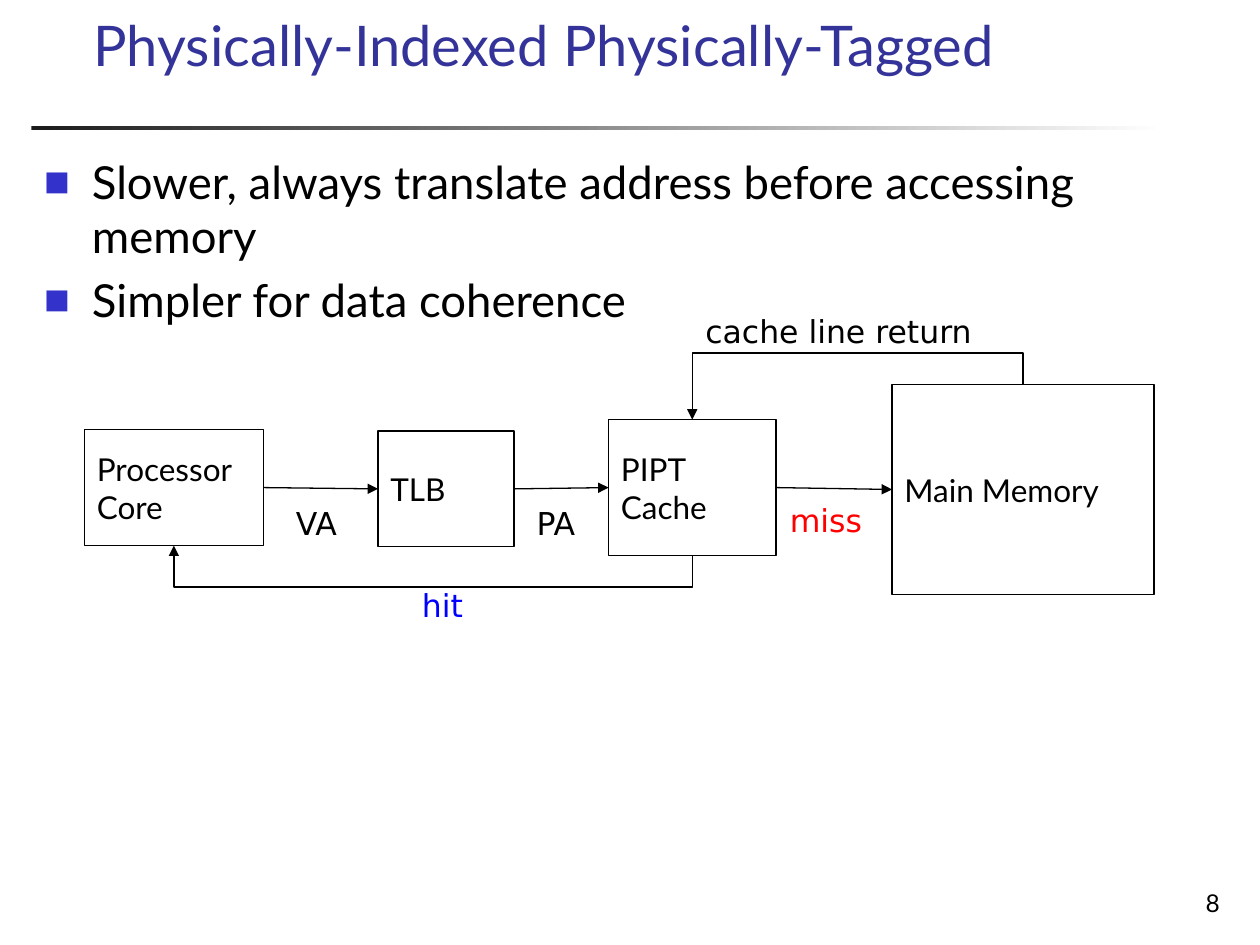
import pptx
import pptx.dml.color
import pptx.enum.dml
import pptx.enum.shapes
import pptx.enum.text
import pptx.oxml
import pptx.oxml.ns
import pptx.util
from pptx.util import Inches

BLACK = pptx.dml.color.RGBColor(0x00, 0x00, 0x00)
WHITE = pptx.dml.color.RGBColor(0xFF, 0xFF, 0xFF)
CHARCOAL = pptx.dml.color.RGBColor(0x1C, 0x1C, 0x1C)
TITLE_BLUE = pptx.dml.color.RGBColor(0x33, 0x33, 0x99)
BULLET_BLUE = pptx.dml.color.RGBColor(0x33, 0x33, 0xCC)
HIT_BLUE = pptx.dml.color.RGBColor(0x00, 0x00, 0xFF)
MISS_RED = pptx.dml.color.RGBColor(0xFF, 0x00, 0x00)

BODY_FONT = "Lato"
LABEL_FONT = "DejaVu Sans"
RECTANGLE = pptx.enum.shapes.MSO_SHAPE.RECTANGLE
CONNECTOR = pptx.enum.shapes.MSO_CONNECTOR
ANCHOR = pptx.enum.text.MSO_ANCHOR
ALIGN = pptx.enum.text.PP_ALIGN
AUTO_SIZE = pptx.enum.text.MSO_AUTO_SIZE
DRAWING = pptx.oxml.ns.nsdecls("a")

BLOCKS = {
    "TLB": (3, 3.42, 1.08, 0.92),
    "Processor\nCore": (0.67, 3.41, 1.42, 0.92),
    "PIPT\nCache": (4.83, 3.33, 1.33, 1.08),
    "Main Memory": (7.08, 3.05, 2.08, 1.67),
}
LABELS = [
    ("VA", (2.25, 3.95, 0.59, 0.4), BLACK),
    ("hit", (3.25, 4.6, 0.58, 0.4), HIT_BLUE),
    ("miss", (6.17, 3.93, 0.85, 0.4), MISS_RED),
    ("cache line return", (5.5, 2.43, 2.58, 0.4), BLACK),
    ("PA", (4.16, 3.95, 0.58, 0.4), BLACK),
]
ELBOW_REACH = Inches(0.25)


def apply_format(target, values):
    for name, value in values.items():
        setattr(target, name, value)


def place(shape, box):
    names = ("left", "top", "width", "height")
    apply_format(shape, dict(zip(names, map(Inches, box))))


def write_text(shape, text, size, color, font=BODY_FONT, frame=None, paragraph=None):
    text_frame = shape.text_frame
    text_frame.text = text
    apply_format(text_frame, {"auto_size": AUTO_SIZE.NONE, "word_wrap": True, **(frame or {})})
    for item in text_frame.paragraphs:
        apply_format(item, {"alignment": ALIGN.LEFT, **(paragraph or {})})
        for run in item.runs:
            apply_format(run.font, {"name": font, "size": pptx.util.Pt(size)})
            run.font.color.rgb = color


def add_title(slide, box):
    title = slide.shapes.title
    place(title, box)
    write_text(title, "Physically-Indexed Physically-Tagged", 32, TITLE_BLUE,
               frame={"vertical_anchor": ANCHOR.BOTTOM})


def add_rule(slide, box):
    rule = slide.shapes.add_shape(RECTANGLE, *map(Inches, box))
    rule.shadow.inherit = False
    rule.line.fill.background()
    rule.fill.gradient()
    rule.fill.gradient_angle = 0
    for stop, color, position in zip(rule.fill.gradient_stops, (CHARCOAL, WHITE), (0, 1)):
        stop.color.rgb = color
        stop.position = position


def add_bullets(slide, box):
    body = slide.placeholders[1]
    place(body, box)
    lines = ["Slower, always translate address before accessing memory",
             "Simpler for data coherence"]
    write_text(body, "\n".join(lines), 26, BLACK, frame={"vertical_anchor": ANCHOR.TOP},
               paragraph={"space_before": pptx.util.Pt(5.2)})
    for paragraph in body.text_frame.paragraphs:
        properties = paragraph._p.get_or_add_pPr()
        properties.set("marL", str(Inches(0.38)))
        properties.set("indent", str(-Inches(0.38)))
        for markup in (f'<a:buClr {DRAWING}><a:srgbClr val="{BULLET_BLUE}"/></a:buClr>',
                       f'<a:buSzPct {DRAWING} val="60000"/>',
                       f'<a:buFont {DRAWING} typeface="{LABEL_FONT}"/>',
                       f'<a:buChar {DRAWING} char="■"/>'):
            properties.append(pptx.oxml.parse_xml(markup))


def add_page_number(slide, box):
    number = slide.shapes.add_textbox(*map(Inches, box))
    write_text(number, "8", 14, BLACK, frame={"vertical_anchor": ANCHOR.BOTTOM},
               paragraph={"alignment": ALIGN.RIGHT})


def add_block(slide, text, box):
    block = slide.shapes.add_shape(RECTANGLE, *map(Inches, box))
    block.shadow.inherit = False
    block.fill.solid()
    block.fill.fore_color.rgb = WHITE
    block.line.color.rgb = BLACK
    block.line.width = pptx.util.Pt(0.75)
    write_text(block, text, 18, BLACK,
               frame={"word_wrap": False, "vertical_anchor": ANCHOR.MIDDLE})
    return block


def add_label(slide, text, box, color):
    label = slide.shapes.add_textbox(*map(Inches, box))
    write_text(label, text, 18, color, LABEL_FONT,
               frame={"word_wrap": False, "auto_size": AUTO_SIZE.SHAPE_TO_FIT_TEXT})


def add_arrow(slide, kind, start=(0, 0), end=(0, 0)):
    arrow = slide.shapes.add_connector(kind, *start, *end)
    arrow.line.color.rgb = BLACK
    arrow.line.width = pptx.util.Pt(0.75)
    arrow.line._get_or_add_ln().append(
        pptx.oxml.parse_xml(f'<a:tailEnd {DRAWING} type="triangle"/>'))
    arrow._element.spPr.append(pptx.oxml.parse_xml(f"<a:effectLst {DRAWING}/>"))
    return arrow


def add_straight_arrow(slide, source, target):
    arrow = add_arrow(slide, CONNECTOR.STRAIGHT)
    arrow.begin_connect(source, 3)
    arrow.end_connect(target, 1)


def add_leftward_elbow(slide, start, end):
    arrow = add_arrow(slide, CONNECTOR.ELBOW, start, end)
    rise, run = abs(end[1] - start[1]), abs(end[0] - start[0])
    apply_format(arrow, {
        "left": (start[0] + end[0] - rise) // 2,
        "top": (start[1] + end[1] - run) // 2,
        "width": rise,
        "height": run,
    })
    transform = arrow._element.spPr.find(pptx.oxml.ns.qn("a:xfrm"))
    flips = {"rot": "16200000", "flipH": str(int(end[1] > start[1])), "flipV": "1"}
    for name, value in flips.items():
        transform.set(name, value)
    geometry = arrow._element.spPr.find(pptx.oxml.ns.qn("a:prstGeom"))
    for guides in geometry.findall(pptx.oxml.ns.qn("a:avLst")):
        geometry.remove(guides)
    bend = round(-100000 * ELBOW_REACH / rise)
    geometry.append(pptx.oxml.parse_xml(
        f'<a:avLst {DRAWING}><a:gd name="adj1" fmla="val {bend}"/></a:avLst>'))


def top_middle(shape):
    return shape.left + shape.width // 2, shape.top


def bottom_middle(shape):
    return shape.left + shape.width // 2, shape.top + shape.height


def add_cache_diagram(slide):
    tlb, core, cache, memory = [add_block(slide, text, box) for text, box in BLOCKS.items()]
    for text, box, color in LABELS:
        add_label(slide, text, box, color)
    for source, target in ((core, tlb), (tlb, cache), (cache, memory)):
        add_straight_arrow(slide, source, target)
    add_leftward_elbow(slide, bottom_middle(cache), bottom_middle(core))
    add_leftward_elbow(slide, top_middle(memory), top_middle(cache))


def main():
    presentation = pptx.Presentation()
    presentation.slide_width = Inches(10)
    presentation.slide_height = Inches(7.5)
    slide = presentation.slides.add_slide(presentation.slide_layouts[1])
    add_rule(slide, (0.25, 1, 9, 0.03))
    add_title(slide, (0.64, 0.15, 8.86, 0.52))
    add_bullets(slide, (0.25, 1.17, 9.54, 5.54))
    add_page_number(slide, (7.7, 6.83, 2.08, 0.5))
    add_cache_diagram(slide)
    presentation.save("out.pptx")


if __name__ == "__main__":
    main()
